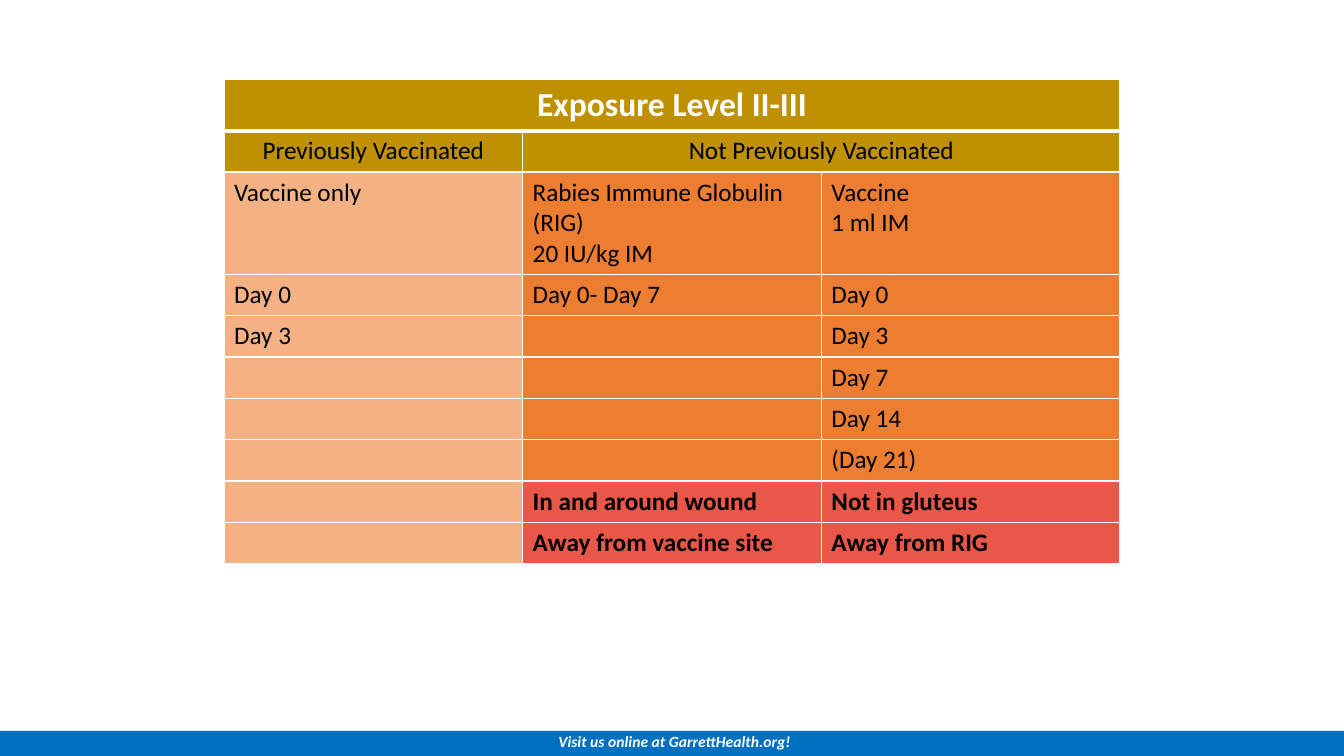
from lxml import etree
from pptx import Presentation
from pptx import util as u
from pptx.dml.color import RGBColor
from pptx.enum import shapes, text
from pptx.oxml import ns

WHITE = RGBColor(0xFF, 0xFF, 0xFF)
BLACK = RGBColor(0x00, 0x00, 0x00)
GOLD = RGBColor(0xBF, 0x90, 0x00)
PEACH = RGBColor(0xF4, 0xB1, 0x83)
ORANGE = RGBColor(0xED, 0x7D, 0x31)
RED = RGBColor(0xE8, 0x57, 0x48)
BLUE = RGBColor(0x00, 0x70, 0xC0)

SCHEDULE = [
    ("Exposure Level II-III", "", ""),
    ("Previously Vaccinated", "Not Previously Vaccinated", ""),
    ("Vaccine only", "Rabies Immune Globulin (RIG)\n20 IU/kg IM", "Vaccine\n1 ml IM"),
    ("Day 0", "Day 0- Day 7", "Day 0"),
    ("Day 3", "", "Day 3"),
    ("", "", "Day 7"),
    ("", "", "Day 14"),
    ("", "", "(Day 21)"),
    ("", "In and around wound", "Not in gluteus"),
    ("", "Away from vaccine site", "Away from RIG"),
]
MERGES = [((0, 0), (0, 2)), ((1, 1), (1, 2))]
HEADER_ROWS, WARNING_START = 2, 8
INVITATION = "Visit us online at GarrettHealth.org!"

TITLE_FONT = {"name": "Calibri", "size": u.Pt(24), "bold": True}
BODY_FONT = {"name": "Calibri", "size": u.Pt(18), "bold": False}
WARNING_FONT = {**BODY_FONT, "bold": True}
FOOTER_FONT = {"name": "Calibri", "size": u.Pt(11.1), "bold": True, "italic": True}

SLIDE_W, SLIDE_H = u.Inches(13.33), u.Inches(7.5)
COLUMN_W, ROW_H = int(SLIDE_W * 2 / 9), u.Inches(0.41)
SCHEDULE_TOP = u.Inches(0.79)
FOOTER_H = SLIDE_H // 30


def style(paragraph, formats, color):
    for key, value in formats.items():
        setattr(paragraph.font, key, value)
    paragraph.font.color.rgb = color


def add_borders(cell, row):
    props = cell._tc.get_or_add_tcPr()
    widths = {"L": 1, "R": 1, "T": 3 if row == 1 else 1, "B": 3 if row == 0 else 1}
    for side, points in widths.items():
        line = etree.SubElement(props, ns.qn(f"a:ln{side}"), w=str(u.Pt(points)))
        fill = etree.SubElement(line, ns.qn("a:solidFill"))
        etree.SubElement(fill, ns.qn("a:srgbClr"), val=str(WHITE))


def cell_look(row, column):
    if row < HEADER_ROWS:
        return GOLD, BODY_FONT if row else TITLE_FONT
    if column == 0:
        return PEACH, BODY_FONT
    return (RED, WARNING_FONT) if row >= WARNING_START else (ORANGE, BODY_FONT)


def add_schedule(slide):
    count = len(SCHEDULE[0])
    width = COLUMN_W * count
    schedule = slide.shapes.add_table(
        len(SCHEDULE), count, (SLIDE_W - width) // 2, SCHEDULE_TOP,
        width, ROW_H * len(SCHEDULE)).table
    schedule.horz_banding = False
    for first, last in MERGES:
        schedule.cell(*first).merge(schedule.cell(*last))
    for row, entries in enumerate(SCHEDULE):
        schedule.rows[row].height = ROW_H
        for column, entry in enumerate(entries):
            cell = schedule.cell(row, column)
            color, formats = cell_look(row, column)
            add_borders(cell, row)
            cell.fill.solid()
            cell.fill.fore_color.rgb = color
            cell.text = entry
            for paragraph in cell.text_frame.paragraphs:
                if row < HEADER_ROWS:
                    paragraph.alignment = text.PP_ALIGN.CENTER
                style(paragraph, formats, BLACK if row else WHITE)


def add_footer(slide):
    footer = slide.shapes.add_shape(
        shapes.MSO_SHAPE.RECTANGLE, 0, SLIDE_H - FOOTER_H, SLIDE_W, FOOTER_H)
    footer.shadow.inherit = False
    footer.fill.solid()
    footer.fill.fore_color.rgb = BLUE
    footer.line.fill.background()
    frame = footer.text_frame
    frame.word_wrap = True
    frame.vertical_anchor = text.MSO_ANCHOR.MIDDLE
    frame.margin_top = frame.margin_bottom = 0
    frame.text = INVITATION
    invitation = frame.paragraphs[0]
    invitation.alignment = text.PP_ALIGN.CENTER
    invitation.line_spacing = 0.8
    invitation._p.get_or_add_pPr().set("marL", str(u.Inches(0.05)))
    style(invitation, FOOTER_FONT, WHITE)


def main():
    deck = Presentation()
    deck.slide_width, deck.slide_height = SLIDE_W, SLIDE_H
    slide = deck.slides.add_slide(deck.slide_layouts[6])
    add_schedule(slide)
    add_footer(slide)
    deck.save("out.pptx")


if __name__ == "__main__":
    main()
